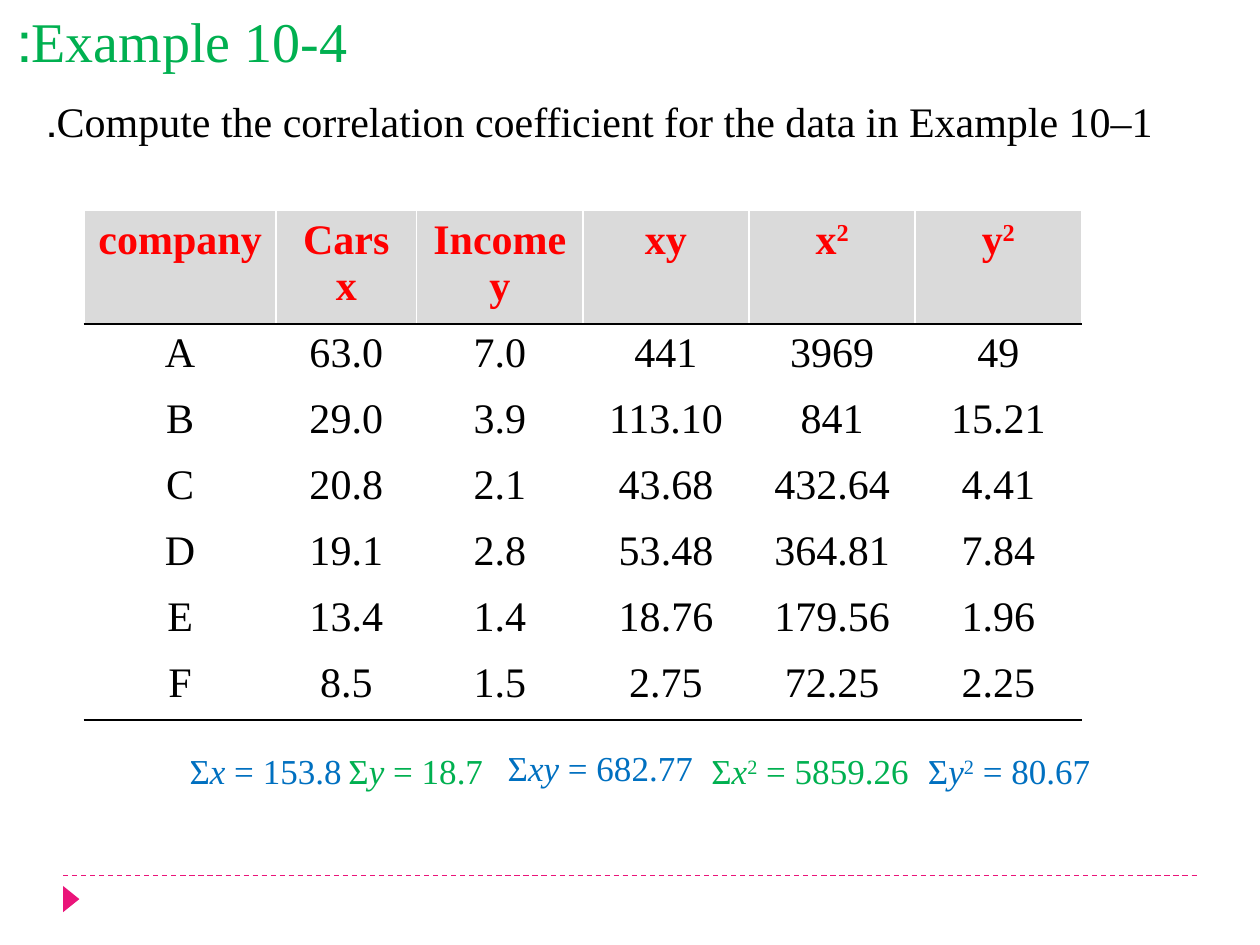
from lxml.etree import SubElement
from pptx import Presentation
from pptx.dml.color import RGBColor
from pptx.enum.dml import MSO_LINE
from pptx.enum.shapes import MSO_CONNECTOR, MSO_SHAPE
from pptx.enum.text import MSO_ANCHOR, PP_ALIGN
from pptx.oxml.ns import qn
from pptx.util import Cm, Pt

FONT = "Times New Roman"
BLACK, WHITE, GREY = "000000", "FFFFFF", "DADADA"
RED, GREEN, BLUE, PINK = "FF0000", "00B050", "0070C0", "EA157A"

TITLE = "Example 10-4:"
TASK = "Compute the correlation coefficient for the data in Example 10–1."
HEADERS = ["company", "Cars\nx", "Income y", "xy", "x^2", "y^2"]
ROWS = [
    ["A", "63.0", "7.0", "441", "3969", "49"],
    ["B", "29.0", "3.9", "113.10", "841", "15.21"],
    ["C", "20.8", "2.1", "43.68", "432.64", "4.41"],
    ["D", "19.1", "2.8", "53.48", "364.81", "7.84"],
    ["E", "13.4", "1.4", "18.76", "179.56", "1.96"],
    ["F", "8.5", "1.5", "2.75", "72.25", "2.25"],
]
COLUMN_WIDTHS = [3.86, 2.84] + [3.35] * 4
HEADER_HEIGHT, ROW_HEIGHT = 2.29, 1.33
SUMS = [
    ("x", "", "153.8", BLUE, (3.33, 14.99, 3.81, 1.12)),
    ("y", "", "18.7", GREEN, (6.71, 14.99, 3.28, 1.12)),
    ("xy", "", "682.77", BLUE, (9.88, 14.92, 4.34, 1.12)),
    ("x", "2", "5859.26", GREEN, (13.97, 14.99, 4.6, 1.12)),
    ("y", "2", "80.67", BLUE, (18.34, 14.99, 3.89, 1.12)),
]


def color(value):
    return RGBColor.from_string(value)


def add_run(paragraph, text, hex_color, raised=False, **formats):
    run = paragraph.add_run()
    run.text = text
    run.font.color.rgb = color(hex_color)
    for name, value in {"name": FONT, **formats}.items():
        setattr(run.font, name, value)
    if raised:
        run._r.get_or_add_rPr().set("baseline", "30000")


def place(shape, box):
    for name, value in zip(("left", "top", "width", "height"), box):
        setattr(shape, name, Cm(value))


def rtl_paragraph(shape, wrap, anchor):
    frame = shape.text_frame
    frame.word_wrap = wrap
    frame.vertical_anchor = anchor
    paragraph = frame.paragraphs[0]
    paragraph.alignment = PP_ALIGN.RIGHT
    paragraph._p.get_or_add_pPr().set("rtl", "1")
    return paragraph


def set_borders(cell, top, bottom):
    properties = cell._tc.get_or_add_tcPr()
    sides = {"lnL": WHITE, "lnR": WHITE, "lnT": top, "lnB": bottom}
    for index, (side, hex_color) in enumerate(sides.items()):
        line = SubElement(properties, qn(f"a:{side}"), w=str(Pt(1)))
        fill = SubElement(line, qn("a:solidFill"))
        SubElement(fill, qn("a:srgbClr"), val=hex_color)
        properties.insert(index, line)


def fill_cell(cell, text, is_header):
    cell.fill.solid()
    cell.fill.fore_color.rgb = color(GREY if is_header else WHITE)
    for index, line in enumerate(text.split("\n")):
        frame = cell.text_frame
        paragraph = frame.add_paragraph() if index else frame.paragraphs[0]
        paragraph.alignment = PP_ALIGN.CENTER
        for part, piece in enumerate(line.split("^")):
            add_run(paragraph, piece, RED if is_header else BLACK,
                    raised=part > 0, size=Pt(24), bold=is_header)


def add_footer(slide):
    rule = slide.shapes.add_connector(
        MSO_CONNECTOR.STRAIGHT, Cm(1.27), Cm(17.65), Cm(24.13), Cm(17.65))
    rule.line.color.rgb = color(PINK)
    rule.line.width = Pt(0.75)
    rule.line.dash_style = MSO_LINE.DASH
    SubElement(rule._element.spPr, qn("a:effectLst"))
    marker = slide.shapes.add_shape(
        MSO_SHAPE.ISOSCELES_TRIANGLE, Cm(1.17), Cm(17.96), Cm(0.53), Cm(0.33))
    marker.rotation = 90
    marker.shadow.inherit = False
    marker.fill.solid()
    marker.fill.fore_color.rgb = color(PINK)
    marker.line.fill.background()


def add_data_table(slide):
    rows = [HEADERS] + ROWS
    heights = [HEADER_HEIGHT] + [ROW_HEIGHT] * len(ROWS)
    table = slide.shapes.add_table(
        len(rows), len(HEADERS), Cm(1.7), Cm(4.24),
        Cm(sum(COLUMN_WIDTHS)), Cm(sum(heights))).table
    table.horz_banding = False
    for column, width in zip(table.columns, COLUMN_WIDTHS):
        column.width = Cm(width)
    for r, (row, height) in enumerate(zip(rows, heights)):
        table.rows[r].height = Cm(height)
        for c, text in enumerate(row):
            cell = table.cell(r, c)
            fill_cell(cell, text, r == 0)
            set_borders(cell, BLACK if r == 1 else WHITE,
                        BLACK if r in (0, len(ROWS)) else WHITE)


def add_sum(slide, variable, power, total, hex_color, box):
    shape = slide.shapes.add_textbox(*map(Cm, box))
    paragraph = rtl_paragraph(shape, False, MSO_ANCHOR.TOP)
    add_run(paragraph, "Σ", hex_color, size=Pt(20))
    add_run(paragraph, variable, hex_color, size=Pt(20), italic=True)
    if power:
        add_run(paragraph, power, hex_color, raised=True, size=Pt(20))
    add_run(paragraph, f" = {total}", hex_color, size=Pt(20))


def main():
    presentation = Presentation()
    presentation.slide_width, presentation.slide_height = Cm(25.4), Cm(19.05)
    slide = presentation.slides.add_slide(presentation.slide_layouts[5])
    add_footer(slide)

    title = slide.shapes.title
    place(title, (0, 0, 7.26, 1.63))
    paragraph = rtl_paragraph(title, False, MSO_ANCHOR.TOP)
    add_run(paragraph, TITLE, GREEN, size=Pt(32))

    task = slide.shapes.add_textbox(Cm(0), Cm(1.7), Cm(23.5), Cm(1.47))
    paragraph = rtl_paragraph(task, True, MSO_ANCHOR.MIDDLE)
    add_run(paragraph, TASK, BLACK, size=Pt(24))

    add_data_table(slide)
    for entry in SUMS:
        add_sum(slide, *entry)
    presentation.save("out.pptx")


if __name__ == "__main__":
    main()
